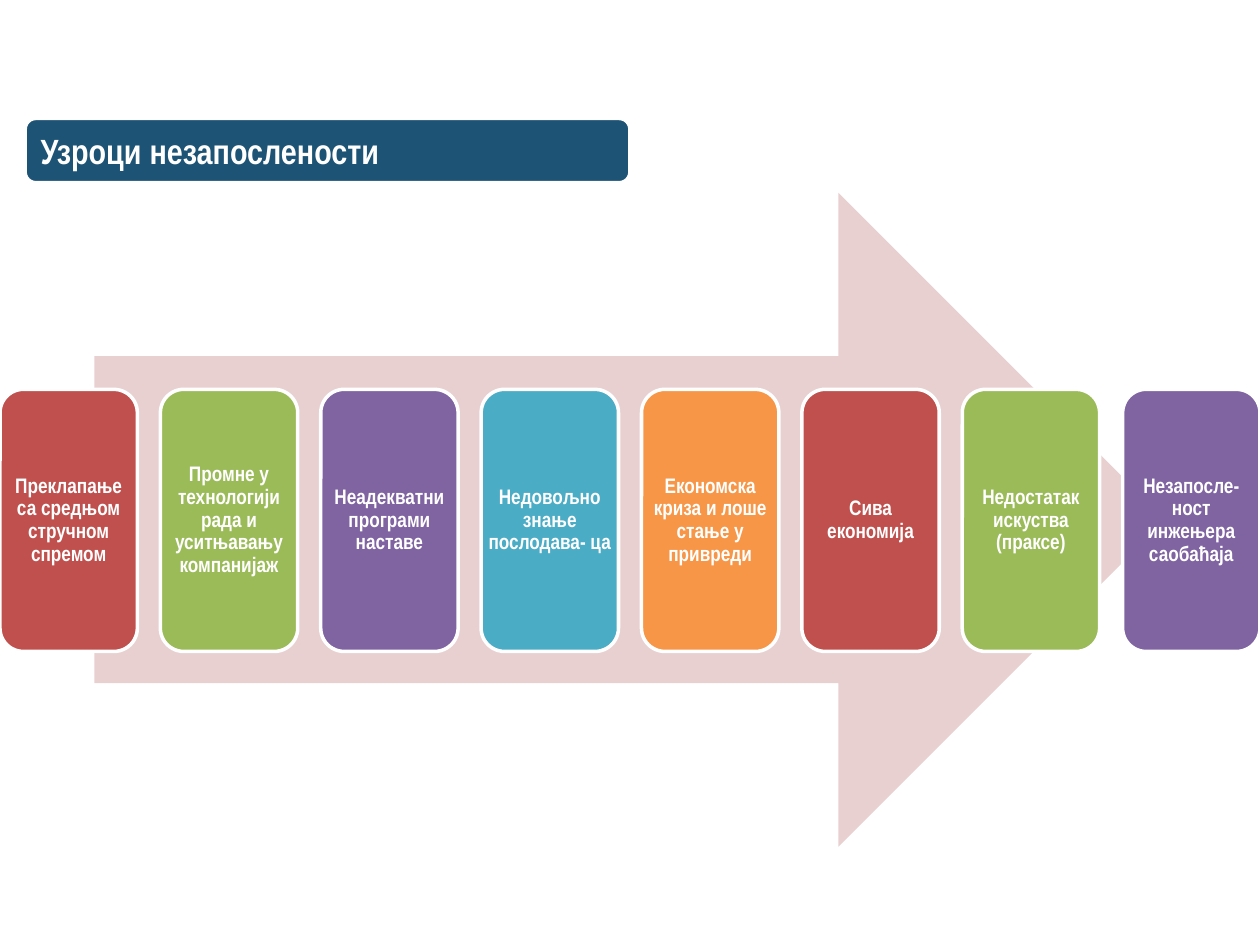
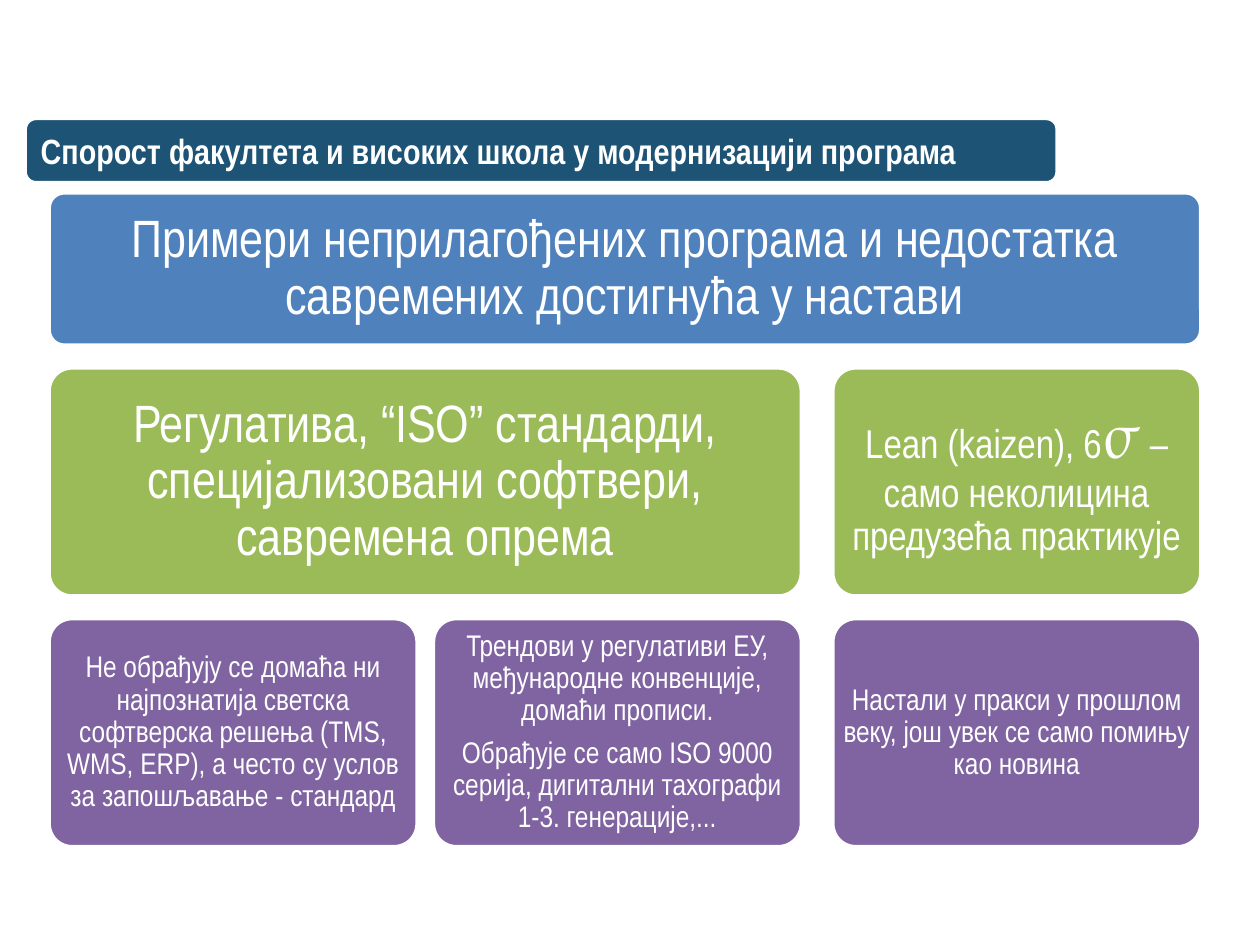
from dataclasses import dataclass
from typing import NamedTuple

from pptx import Presentation
from pptx.dml.color import RGBColor
from pptx.enum.shapes import MSO_SHAPE
from pptx.enum.text import MSO_ANCHOR, PP_ALIGN
from pptx.util import Inches, Pt

# Shared look
FONT = "Arial Narrow"
MATH = "TeX Gyre Pagella"
WHITE = "FFFFFF"
NAVY = "1D5375"
BLUE = "4F81BD"
RED = "C0504D"
GREEN = "9BBB59"
PURPLE = "8064A2"
TEAL = "4BACC6"
ORANGE = "F79646"
PINK = "E8D0D0"


class Run(NamedTuple):
    text: str
    size: float
    font: str = FONT


@dataclass
class Card:
    left: float
    top: float
    width: float
    height: float
    fill: str
    paras: list
    size: float
    inset: float
    round: float = 0.1
    bold: bool = False


def color(code: str) -> RGBColor:
    return RGBColor.from_string(code)


def draw(slide, kind, left, top, width, height, fill, edge=None):
    shape = slide.shapes.add_shape(
        kind, Inches(left), Inches(top), Inches(width), Inches(height))
    shape.shadow.inherit = False
    shape.fill.solid()
    shape.fill.fore_color.rgb = color(fill)
    if edge:
        shape.line.color.rgb = color(edge)
        shape.line.width = Pt(2)
    else:
        shape.line.fill.background()
    return shape


def write(shape, paras, *, size, bold=False, align=PP_ALIGN.CENTER,
          inset=None, spacing=1.0) -> None:
    """Fill a shape with paragraphs, each a string or a list of runs."""
    frame = shape.text_frame
    frame.word_wrap = True
    frame.vertical_anchor = MSO_ANCHOR.MIDDLE
    if inset is not None:
        frame.margin_left = frame.margin_right = Inches(inset)
        frame.margin_top = frame.margin_bottom = Inches(inset)
    for i, runs in enumerate(paras):
        para = frame.add_paragraph() if i else frame.paragraphs[0]
        para.alignment = align
        para.line_spacing = spacing
        if i:
            para.space_before = Pt(round(size * 0.35))
        for item in [Run(runs, size)] if isinstance(runs, str) else runs:
            run = para.add_run()
            run.text = item.text
            run.font.name = item.font
            run.font.size = Pt(item.size)
            run.font.bold = bold
            run.font.color.rgb = color(WHITE)


def add_title(slide, text: str, width: float) -> None:
    band = draw(slide, MSO_SHAPE.ROUNDED_RECTANGLE,
                0.2, 0.94, width, 0.51, NAVY, WHITE)
    write(band, [text], size=20, bold=True, align=PP_ALIGN.LEFT)


def add_card(slide, card: Card) -> None:
    shape = draw(slide, MSO_SHAPE.ROUNDED_RECTANGLE, card.left, card.top,
                 card.width, card.height, card.fill, WHITE)
    shape.adjustments[0] = card.round
    # The rounded corner already insets the text by 0.29 of its radius
    corner = 0.29 * card.round * min(card.width, card.height)
    write(shape, card.paras, size=card.size, bold=card.bold,
          inset=card.inset - corner, spacing=0.9)


def build_causes(slide) -> None:
    add_title(slide, "Узроци незапослености", 4.8)
    draw(slide, MSO_SHAPE.RIGHT_ARROW, 0.75, 1.53, 8.5, 5.19, PINK)

    # Evenly spaced tiles across the whole slide
    causes = [
        "Преклапање са средњом стручном спремом",
        "Промне у технологији рада и уситњавању компанијаж",
        "Неадекватни програми наставе",
        "Недовољно знање послодава- ца",
        "Економска криза и лоше стање у привреди",
        "Сива економија",
        "Недостатак искуства (праксе)",
        "Незапосле- ност инжењера саобаћаја",
    ]
    fills = [RED, GREEN, PURPLE, TEAL, ORANGE]
    width = 1.09
    step = (10 - width) / (len(causes) - 1)
    for i, cause in enumerate(causes):
        add_card(slide, Card(i * step, 3.09, width, 2.08,
                             fills[i % len(fills)], [cause], size=12,
                             inset=0.05, round=0.17, bold=True))


def build_lag(slide) -> None:
    add_title(slide,
              "Спорост факултета и високих школа у модернизацији програма",
              8.19)

    # Three columns, three rows
    cols = [0.39, 3.44, 6.61]
    wide = 2.92
    head, tall, gap = 1.21, 1.81, 0.18
    top = 1.53
    mid = top + head + gap
    low = mid + tall + gap

    def span(first: int, last: int) -> float:
        return cols[last] + wide - cols[first]

    lean = [Run("Lean (kaizen), 6", 23), Run("σ", 36, MATH),
            Run(" – само неколицина предузећа практикује", 23)]
    cards = [
        Card(cols[0], top, span(0, 2), head, BLUE,
             ["Примери неприлагођених програма и недостатка "
              "савремених достигнућа у настави"], 30, 0.12),
        Card(cols[0], mid, span(0, 1), tall, GREEN,
             ["Регулатива, “ISO” стандарди, специјализовани софтвери, "
              "савремена опрема"], 30, 0.12),
        Card(cols[2], mid, wide, tall, GREEN, [lean], 23, 0.1),
    ]
    details = [
        ["Не обрађују се домаћа ни најпознатија светска софтверска "
         "решења (TMS, WMS, ERP), a често су услов за "
         "запошљавање - стандард"],
        ["Трендови у регулативи ЕУ, међународне конвенције, "
         "домаћи прописи.",
         "Обрађује се само ISO 9000 серија, дигитални тахографи "
         "1-3. генерације,..."],
        ["Настали у пракси у прошлом веку, још увек се само помињу "
         "као новина"],
    ]
    cards += [Card(left, low, wide, tall, PURPLE, paras, 17, 0.07)
              for left, paras in zip(cols, details)]
    for card in cards:
        add_card(slide, card)


def main() -> None:
    deck = Presentation()
    deck.slide_width = Inches(10)
    deck.slide_height = Inches(7.5)
    for build in (build_causes, build_lag):
        build(deck.slides.add_slide(deck.slide_layouts[6]))
    deck.save("out.pptx")


if __name__ == "__main__":
    main()
